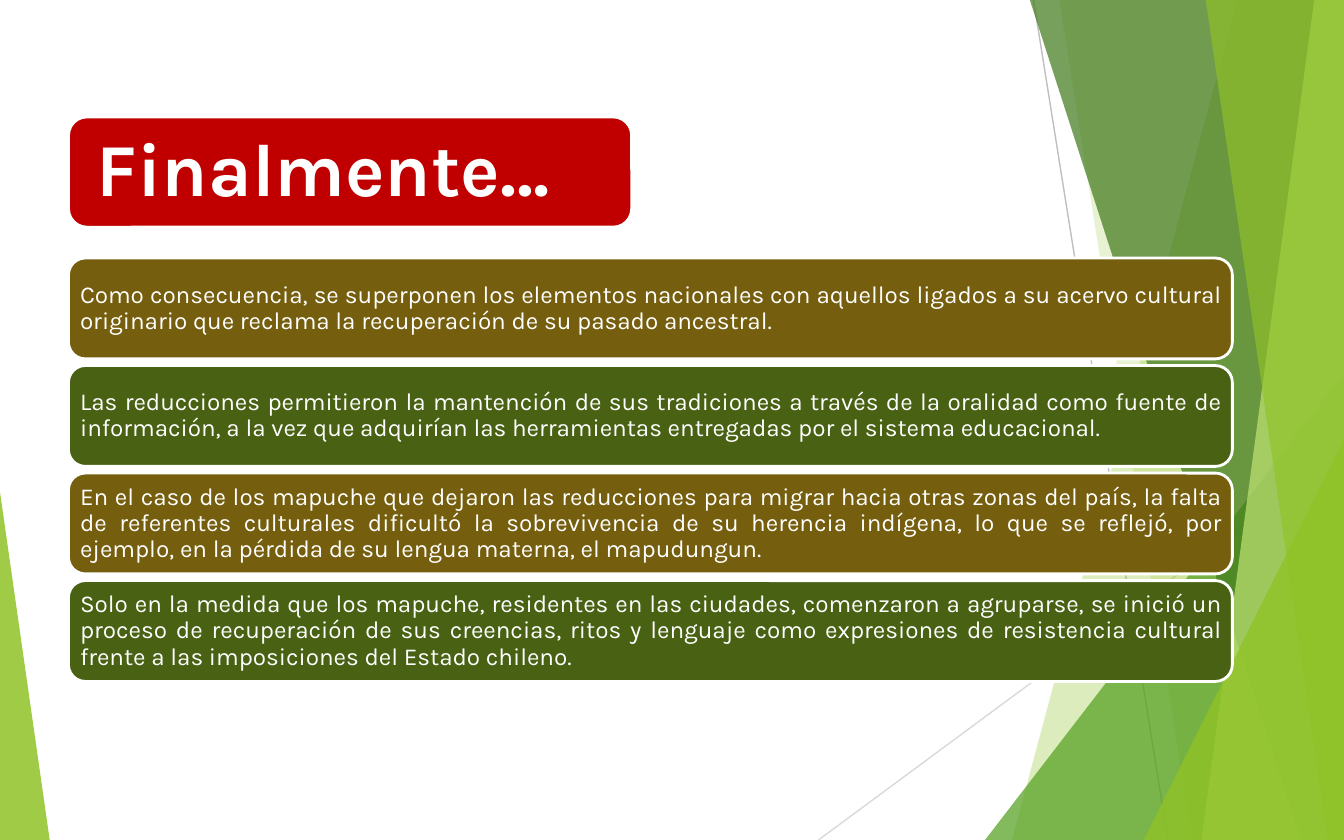
from typing import NamedTuple

from lxml.etree import SubElement
from pptx import Presentation
from pptx.dml.color import RGBColor
from pptx.enum.shapes import MSO_CONNECTOR as CONN, MSO_SHAPE as SHAPE
from pptx.enum.text import MSO_ANCHOR as ANCHOR, PP_ALIGN as ALIGN
from pptx.oxml.ns import qn
from pptx.util import Pt

PX = 9144  # 100 px to the inch
W, H = 1000, 625

WHITE = RGBColor(0xFF, 0xFF, 0xFF)
RED = RGBColor(0xC0, 0x00, 0x00)
BROWN = RGBColor(0x75, 0x5E, 0x0D)
OLIVE = RGBColor(0x48, 0x61, 0x13)
LIME = RGBColor(0x90, 0xC2, 0x26)
PALE_LIME = RGBColor(0xC0, 0xE4, 0x74)
GREEN = RGBColor(0x54, 0xA0, 0x21)
DARK_GREEN = RGBColor(0x3F, 0x78, 0x19)
GREY = RGBColor(0xBF, 0xBF, 0xBF)
LIGHT_GREY = RGBColor(0xD9, 0xD9, 0xD9)


class Ray(NamedTuple):
    x1: int
    y1: int
    x2: int
    y2: int
    color: RGBColor


class Band(NamedTuple):
    """Area between a slanted left edge and the right side of the slide."""
    top_x: int
    bottom_x: int
    color: RGBColor
    opacity: int


class Wedge(NamedTuple):
    """Triangle standing on the bottom of the slide; apex from 0 to 1."""
    x: int
    y: int
    w: int
    apex: int
    color: RGBColor
    opacity: int


class Card(NamedTuple):
    y: int
    w: int
    h: int
    color: RGBColor
    text: str
    inset: int
    align: ALIGN
    font: dict


def fill_clear(sp, color: RGBColor, opacity: int) -> None:
    sp.shadow.inherit = False
    sp.fill.solid()
    sp.fill.fore_color.rgb = color
    sp.line.fill.background()
    clr = sp.fill._xPr.find(f"{qn('a:solidFill')}/{qn('a:srgbClr')}")
    SubElement(clr, qn("a:alpha"), val=str(opacity * 1000))


def draw_ray(s, ray: Ray) -> None:
    ends = (v * PX for v in ray[:4])
    line = s.shapes.add_connector(CONN.STRAIGHT, *ends)
    line.line.color.rgb = ray.color
    line.line.width = Pt(0.75)
    SubElement(line._element.spPr, qn("a:effectLst"))


def draw_band(s, band: Band) -> None:
    fb = s.shapes.build_freeform(band.top_x, -1, scale=PX)
    fb.add_line_segments([(W, -1), (W, H), (band.bottom_x, H)], close=True)
    fill_clear(fb.convert_to_shape(), band.color, band.opacity)


def draw_wedge(s, wedge: Wedge) -> None:
    sp = s.shapes.add_shape(SHAPE.ISOSCELES_TRIANGLE, wedge.x * PX, wedge.y * PX,
                            wedge.w * PX, (H - wedge.y) * PX)
    sp.adjustments[0] = wedge.apex
    fill_clear(sp, wedge.color, wedge.opacity)


def draw_card(s, card: Card) -> None:
    sp = s.shapes.add_shape(SHAPE.ROUNDED_RECTANGLE, LEFT * PX, card.y * PX,
                            card.w * PX, card.h * PX)
    sp.shadow.inherit = False
    sp.fill.solid()
    sp.fill.fore_color.rgb = card.color
    sp.line.color.rgb = WHITE
    sp.line.width = Pt(1.5)

    tf = sp.text_frame
    tf.word_wrap = True
    tf.vertical_anchor = ANCHOR.MIDDLE
    for side in ("left", "top", "right", "bottom"):
        setattr(tf, f"margin_{side}", card.inset * PX)
    p = tf.paragraphs[0]
    p.alignment = card.align
    p.line_spacing = 0.9
    r = p.add_run()
    r.text = card.text
    r.font.color.rgb = WHITE
    for name, value in card.font.items():
        setattr(r.font, name, value)


# Backdrop, from back to front
RAYS = [
    Ray(769, 0, 869, H, GREY),
    Ray(W, 336, 609, H, LIGHT_GREY),
]
BACKDROP = [
    Band(921, 753, LIME, 30),
    Band(788, 887, LIME, 20),
    Wedge(733, 278, 267, 1, GREEN, 72),
    Band(766, 968, DARK_GREEN, 70),
    Band(978, 894, PALE_LIME, 70),
    Band(897, 988, LIME, 65),
    Wedge(851, 327, 149, 1, LIME, 80),
    Wedge(0, 366, 37, 0, LIME, 85),
]

# Title and statements
LEFT = 51
FIRST_Y, CARD_H, GAP = 192, 75, 5
TITLE_FONT = {"name": "Karla", "size": Pt(40), "bold": True}
BODY_FONT = {"name": "Karla", "size": Pt(13)}
TITLE = Card(87, 419, 82, RED, "Finalmente…", 17, ALIGN.LEFT, TITLE_FONT)
STATEMENTS = [
    "Como consecuencia, se superponen los elementos nacionales con aquellos ligados "
    "a su acervo cultural originario que reclama la recuperación de su pasado ancestral.",
    "Las reducciones permitieron la mantención de sus tradiciones a través de la "
    "oralidad como fuente de información, a la vez que adquirían las herramientas "
    "entregadas por el sistema educacional.",
    "En el caso de los mapuche que dejaron las reducciones para migrar hacia otras "
    "zonas del país, la falta de referentes culturales dificultó la sobrevivencia de "
    "su herencia indígena, lo que se reflejó, por ejemplo, en la pérdida de su lengua "
    "materna, el mapudungun.",
    "Solo en la medida que los mapuche, residentes en las ciudades, comenzaron a "
    "agruparse, se inició un proceso de recuperación de sus creencias, ritos y "
    "lenguaje como expresiones de resistencia cultural frente a las imposiciones del "
    "Estado chileno.",
]


def main() -> None:
    prs = Presentation()
    prs.slide_width, prs.slide_height = W * PX, H * PX
    s = prs.slides.add_slide(prs.slide_layouts[6])

    for ray in RAYS:
        draw_ray(s, ray)
    for part in BACKDROP:
        if isinstance(part, Band):
            draw_band(s, part)
        else:
            draw_wedge(s, part)

    draw_card(s, TITLE)
    for i, text in enumerate(STATEMENTS):
        color = OLIVE if i % 2 else BROWN
        y = FIRST_Y + i * (CARD_H + GAP)
        draw_card(s, Card(y, 866, CARD_H, color, text, 5, ALIGN.JUSTIFY, BODY_FONT))

    prs.save("out.pptx")


if __name__ == "__main__":
    main()
